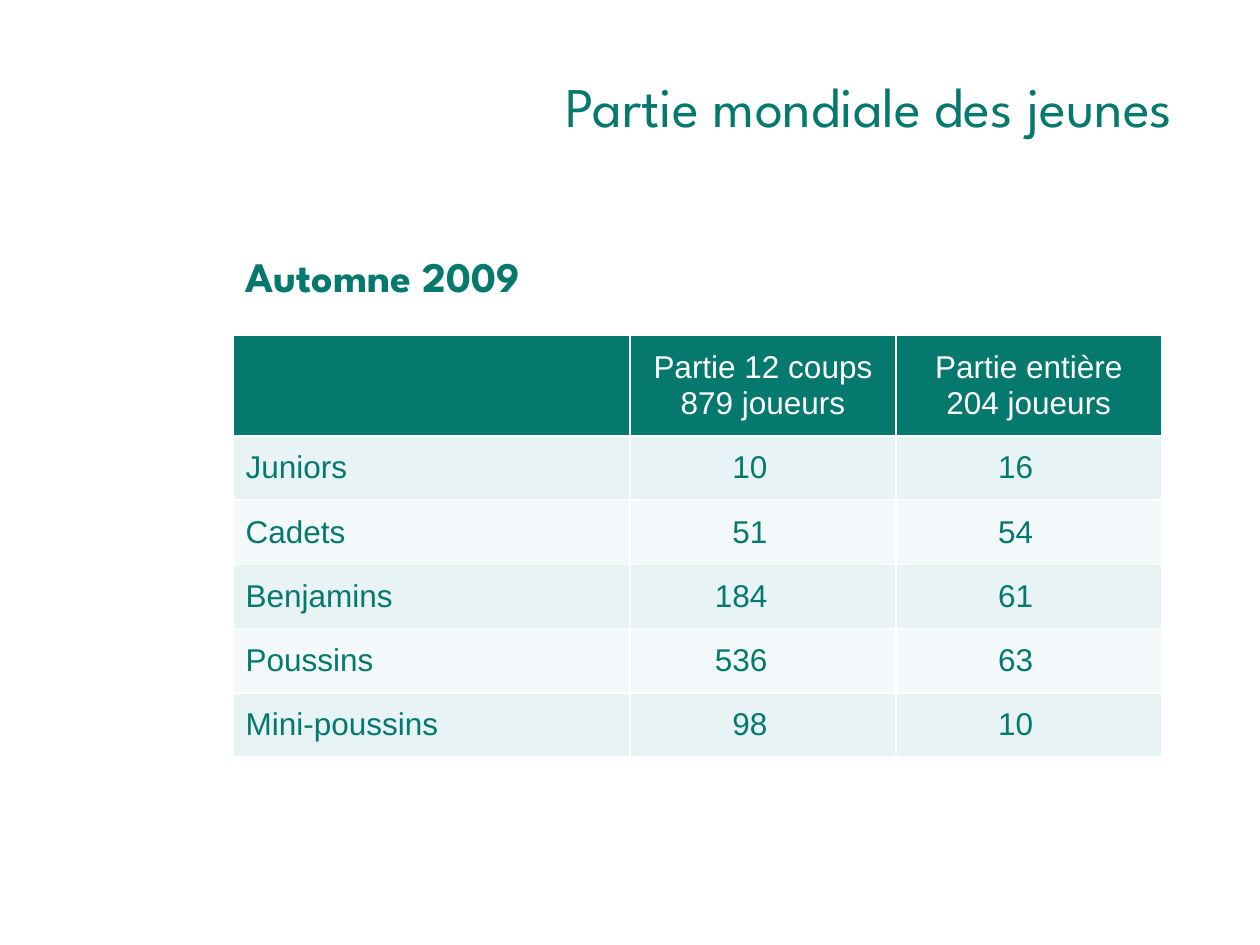
from lxml.etree import SubElement
from pptx import Presentation
from pptx.dml.color import RGBColor
from pptx.enum.text import MSO_ANCHOR, MSO_AUTO_SIZE, PP_ALIGN
from pptx.oxml.ns import qn
from pptx.util import Inches, Pt

COLORS = {"green": "05796E", "white": "FFFFFF", "band_dark": "E7F3F4", "band_light": "F3F9FA"}
HEADING_FONT = "League Spartan"
TABLE_FONT = "Arial"
COLUMN_WIDTHS = [3.15, 2.11, 2.11]
HEADER_HEIGHT = 0.8
ROW_HEIGHT = 0.51
ROWS = [
    ["", "Partie 12 coups\n879 joueurs", "Partie entière\n204 joueurs"],
    ["Juniors", "10", "16"],
    ["Cadets", "51", "54"],
    ["Benjamins", "184", "61"],
    ["Poussins", "536", "63"],
    ["Mini-poussins", "98", "10"],
]


def format_text(text_frame, font_name, size, color, alignment, bold=False):
    for paragraph in text_frame.paragraphs:
        paragraph.alignment = alignment
        for run in paragraph.runs:
            run.font.name = font_name
            run.font.size = Pt(size)
            run.font.bold = bold
            run.font.color.rgb = RGBColor.from_string(COLORS[color])


def add_title(slide, text):
    title = slide.shapes.title
    title.left, title.top = Inches(0), Inches(0.52)
    title.width, title.height = Inches(9.41), Inches(0.63)
    text_frame = title.text_frame
    text_frame.text = text
    text_frame.vertical_anchor = MSO_ANCHOR.MIDDLE
    format_text(text_frame, HEADING_FONT, 32, "green", PP_ALIGN.RIGHT)


def add_season(slide, text):
    box = slide.shapes.add_textbox(Inches(1.85), Inches(1.94), Inches(2.57), Inches(0.5))
    text_frame = box.text_frame
    text_frame.text = text
    text_frame.word_wrap = False
    text_frame.auto_size = MSO_AUTO_SIZE.SHAPE_TO_FIT_TEXT
    format_text(text_frame, HEADING_FONT, 24, "green", PP_ALIGN.LEFT, bold=True)


def set_borders(cell, bottom_width):
    properties = cell._tc.get_or_add_tcPr()
    widths = {"a:lnL": 1, "a:lnR": 1, "a:lnT": 1, "a:lnB": bottom_width}
    for position, (tag, width) in enumerate(widths.items()):
        line = SubElement(properties, qn(tag), w=str(Pt(width)))
        fill = SubElement(line, qn("a:solidFill"))
        SubElement(fill, qn("a:srgbClr"), val=COLORS["white"])
        properties.insert(position, line)


def format_cell(cell, row, column):
    is_header = row == 0
    if is_header:
        fill, color, alignment = "green", "white", PP_ALIGN.CENTER
    else:
        fill = "band_dark" if row % 2 else "band_light"
        color = "green"
        alignment = PP_ALIGN.RIGHT if column else PP_ALIGN.LEFT
        if column:
            cell.margin_right = Inches(1.02)
    cell.fill.solid()
    cell.fill.fore_color.rgb = RGBColor.from_string(COLORS[fill])
    cell.vertical_anchor = MSO_ANCHOR.MIDDLE
    format_text(cell.text_frame, TABLE_FONT, 18, color, alignment)
    set_borders(cell, 3 if is_header and False else 1)


def add_results_table(slide):
    height = HEADER_HEIGHT + ROW_HEIGHT * (len(ROWS) - 1)
    frame = slide.shapes.add_table(
        len(ROWS), len(COLUMN_WIDTHS), Inches(1.85), Inches(2.66),
        Inches(sum(COLUMN_WIDTHS)), Inches(height))
    table = frame.table
    for column, width in enumerate(COLUMN_WIDTHS):
        table.columns[column].width = Inches(width)
    for row, values in enumerate(ROWS):
        table.rows[row].height = Inches(ROW_HEIGHT if row else HEADER_HEIGHT)
        for column, value in enumerate(values):
            cell = table.cell(row, column)
            cell.text_frame.text = value
            format_cell(cell, row, column)


def main():
    presentation = Presentation()
    presentation.slide_width = Inches(10)
    presentation.slide_height = Inches(7.5)
    slide = presentation.slides.add_slide(presentation.slide_layouts[5])
    add_title(slide, "Partie mondiale des jeunes")
    add_results_table(slide)
    add_season(slide, "Automne 2009")
    presentation.save("out.pptx")


if __name__ == "__main__":
    main()
